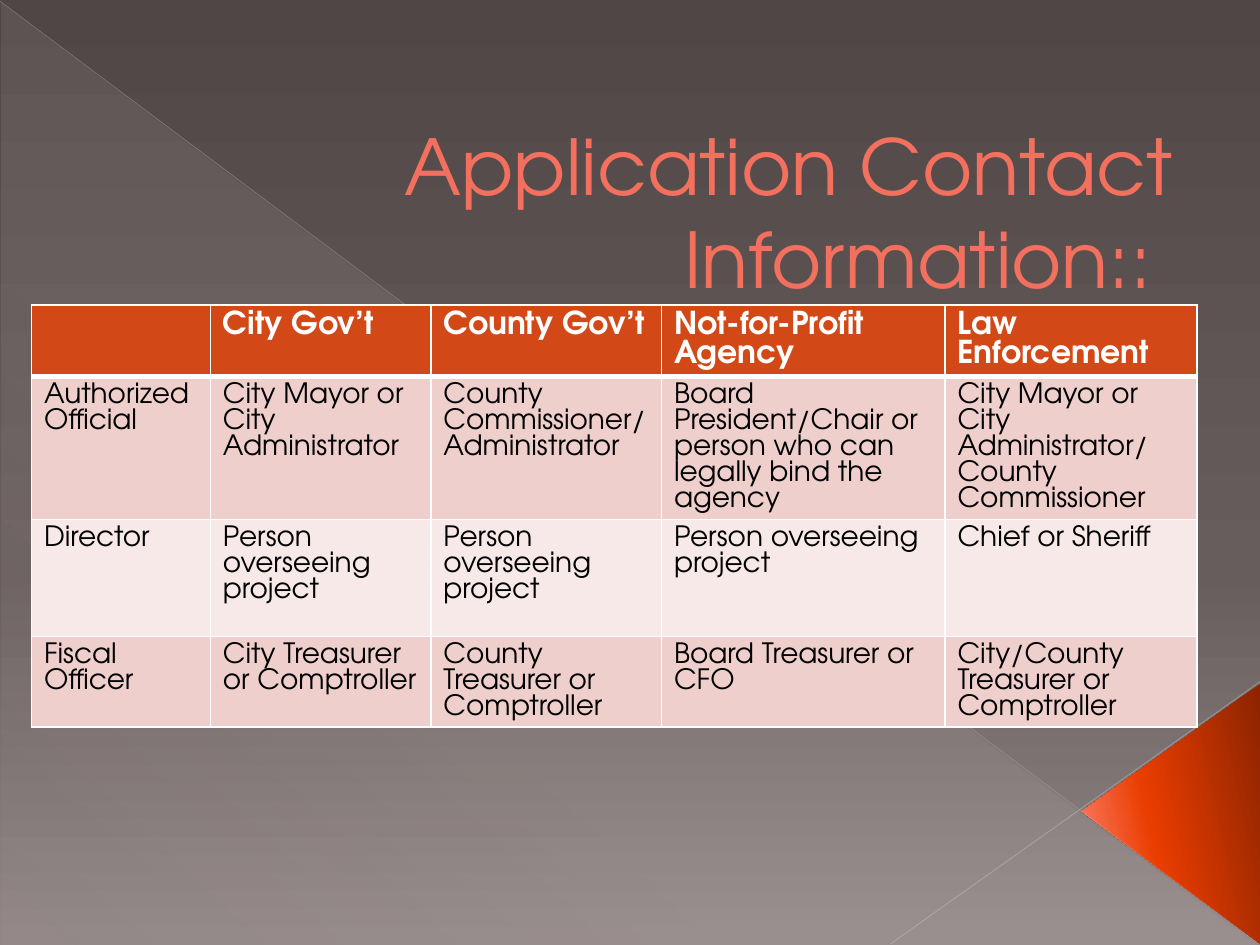
from lxml import etree
from pptx import Presentation
from pptx.dml.color import RGBColor
from pptx.enum.shapes import MSO_CONNECTOR, MSO_SHAPE
from pptx.enum.text import MSO_ANCHOR, PP_ALIGN
from pptx.oxml import parse_xml
from pptx.oxml.ns import nsdecls, qn
from pptx.util import Inches, Pt

FONT = "TeX Gyre Adventor"
TITLE_COLOR = RGBColor(0xF4, 0x70, 0x5E)
HEADER_FILL = RGBColor(0xD3, 0x48, 0x17)
DARK_BAND = RGBColor(0xEF, 0xCF, 0xCC)
LIGHT_BAND = RGBColor(0xF7, 0xE9, 0xE8)
WHITE = RGBColor(0xFF, 0xFF, 0xFF)
BLACK = RGBColor(0x00, 0x00, 0x00)
LINE_UPPER = RGBColor(0xC1, 0xBE, 0xBE)
LINE_LOWER = RGBColor(0xC7, 0xC5, 0xC5)


def set_gradient(element, angle, stops):
    """Swap the first solid fill for a gradient of (position, colour, opacity) stops."""
    stop_xml = "".join(
        f'<a:gs pos="{position * 1000}"><a:srgbClr val="{color}">'
        f'<a:alpha val="{opacity * 1000}"/></a:srgbClr></a:gs>'
        for position, color, opacity in stops)
    solid = next(element.iter(qn("a:solidFill")))
    solid.getparent().replace(solid, parse_xml(
        f'<a:gradFill {nsdecls("a")} rotWithShape="1"><a:gsLst>{stop_xml}</a:gsLst>'
        f'<a:lin ang="{angle * 60000}" scaled="0"/></a:gradFill>'))


def style_paragraph(paragraph, size, color, spacing, bold=False):
    paragraph.line_spacing = Pt(spacing)
    for run in paragraph.runs:
        run.font.name = FONT
        run.font.size = Pt(size)
        run.font.bold = bold
        run.font.color.rgb = color


presentation = Presentation()
presentation.slide_width = Inches(10)
presentation.slide_height = Inches(7.5)
slide = presentation.slides.add_slide(presentation.slide_layouts[6])

# Background
slide.background.fill.solid()
set_gradient(slide.element, 90,
             [(0, "4F4646", 100), (60, "685D5D", 100), (100, "928787", 100)])

# Decorative triangles
large_triangle = slide.shapes.add_shape(
    MSO_SHAPE.RIGHT_TRIANGLE, Inches(0.01), Inches(0.02), Inches(9.98), Inches(7.48))
corner_triangle = slide.shapes.add_shape(
    MSO_SHAPE.ISOSCELES_TRIANGLE, Inches(8.26), Inches(5.75), Inches(2.07), Inches(1.42))
corner_triangle.rotation = 270
corner_triangle.adjustments[0] = 0.51
for shape, angle, stops in [
    (large_triangle, 133, [(0, "E9E5DC", 10), (70, "E9E5DC", 8), (100, "E9E5DC", 1)]),
    (corner_triangle, 258, [(0, "8B2400", 100), (60, "EA3D00", 100), (100, "FF887A", 100)]),
]:
    shape.shadow.inherit = False
    shape.line.fill.background()
    shape.fill.solid()
    set_gradient(shape.element, angle, stops)

# Thin diagonal lines
for start_x, start_y, end_x, end_y, color, width, opacity in [
    (0, 0.01, 9.99, 7.49, LINE_UPPER, 0.39, 35),
    (10, 5.41, 7.07, 7.49, LINE_LOWER, 0.47, 45),
]:
    line = slide.shapes.add_connector(
        MSO_CONNECTOR.STRAIGHT, Inches(start_x), Inches(start_y), Inches(end_x), Inches(end_y))
    line.line.color.rgb = color
    line.line.width = Pt(width)
    color_element = next(line.element.iter(qn("a:srgbClr")))
    etree.SubElement(color_element, qn("a:alpha")).set("val", str(opacity * 1000))
    etree.SubElement(line.element.spPr, qn("a:effectLst"))

# Title
title = slide.shapes.add_textbox(Inches(0.59), Inches(0.85), Inches(8.82), Inches(1.61))
title.text_frame.word_wrap = True
title.text_frame.vertical_anchor = MSO_ANCHOR.BOTTOM
title.text_frame.text = "Application Contact Information:: "
title_paragraph = title.text_frame.paragraphs[0]
title_paragraph.alignment = PP_ALIGN.RIGHT
style_paragraph(title_paragraph, 44, TITLE_COLOR, 53)

# Contact table
rows = [
    ["", "City Gov’t", "County Gov’t", "Not-for-Profit Agency", "Law Enforcement"],
    ["Authorized Official", "City Mayor or City Administrator",
     "County Commissioner/\nAdministrator",
     "Board President/Chair or person who can legally bind the agency",
     "City Mayor or City Administrator/\nCounty Commissioner"],
    ["Director"] + ["Person overseeing project"] * 3 + ["Chief or Sheriff"],
    ["Fiscal\nOfficer", "City Treasurer or Comptroller",
     "County Treasurer or Comptroller", "Board Treasurer or CFO",
     "City/County Treasurer or Comptroller"],
]
column_widths = [1.42, 1.75, 1.83, 2.25, 2]
row_heights = [0.57, 1.13, 0.93, 0.72]
table = slide.shapes.add_table(
    len(rows), len(column_widths), Inches(0.25), Inches(2.42),
    Inches(sum(column_widths)), Inches(sum(row_heights))).table
for column, width in zip(table.columns, column_widths):
    column.width = Inches(width)
for row, height in zip(table.rows, row_heights):
    row.height = Inches(height)

for row_index, texts in enumerate(rows):
    is_header = row_index == 0
    fill = HEADER_FILL if is_header else DARK_BAND if row_index % 2 else LIGHT_BAND
    for column_index, text in enumerate(texts):
        cell = table.cell(row_index, column_index)
        # White borders, heavier between header and body
        borders = {"lnL": 1, "lnR": 1, "lnT": 3 if row_index == 1 else 1,
                   "lnB": 3 if is_header else 1}
        properties = cell._tc.get_or_add_tcPr()
        for side, width in borders.items():
            properties.append(parse_xml(
                f'<a:{side} {nsdecls("a")} w="{Pt(width)}"><a:solidFill>'
                f'<a:srgbClr val="{WHITE}"/></a:solidFill></a:{side}>'))
        cell.fill.solid()
        cell.fill.fore_color.rgb = fill
        cell.text_frame.text = text
        for paragraph in cell.text_frame.paragraphs:
            if is_header:
                style_paragraph(paragraph, 18, WHITE, 16.7, bold=True)
            else:
                style_paragraph(paragraph, 16, BLACK, 14.85)

presentation.save("out.pptx")
